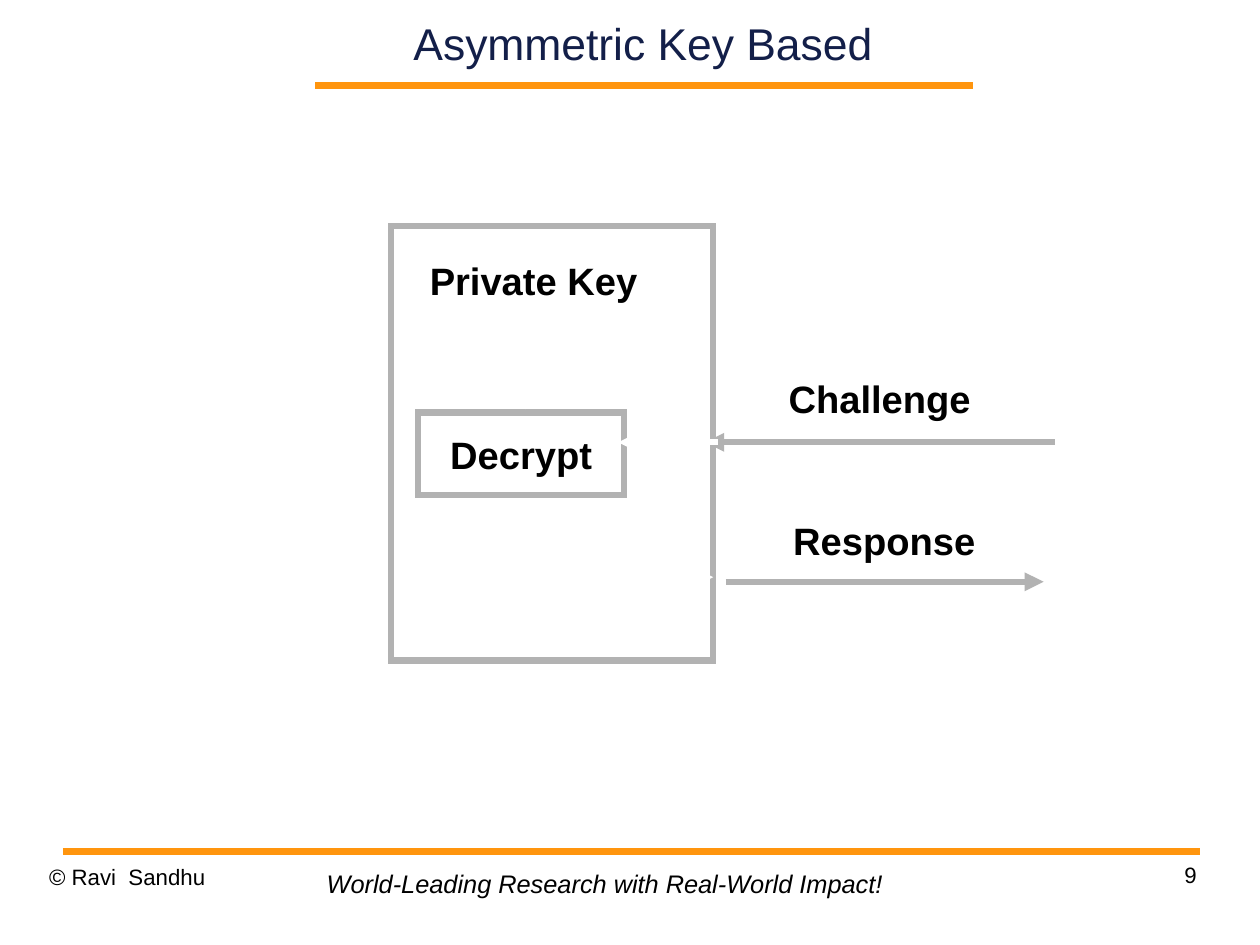
from lxml import etree
from pptx import Presentation
from pptx.dml.color import RGBColor
from pptx.enum.shapes import MSO_CONNECTOR, MSO_SHAPE
from pptx.enum.text import MSO_ANCHOR, MSO_AUTO_SIZE, PP_ALIGN
from pptx.oxml.ns import qn
from pptx.util import Inches, Pt

ORANGE = RGBColor(0xFF, 0x95, 0x0E)
NAVY = RGBColor(0x13, 0x1F, 0x49)
GRAY = RGBColor(0xB2, 0xB2, 0xB2)
BLACK = RGBColor(0, 0, 0)
WHITE = RGBColor(0xFF, 0xFF, 0xFF)
STRAIGHT = MSO_CONNECTOR.STRAIGHT
RECT = MSO_SHAPE.RECTANGLE
MIDDLE = MSO_ANCHOR.MIDDLE
LEFT, CENTER, RIGHT = PP_ALIGN.LEFT, PP_ALIGN.CENTER, PP_ALIGN.RIGHT
GROW = MSO_AUTO_SIZE.SHAPE_TO_FIT_TEXT
WIDTH, HEIGHT = 28 / 2.54, 21 / 2.54


def fill_text(shape, text, size, color=BLACK, align=LEFT, space=1.0,
              pad=(0, 0), wrap=True, bold=False, italic=False):
    """Write one styled paragraph into a shape."""
    frame = shape.text_frame
    frame.word_wrap = wrap
    frame.margin_left = frame.margin_right = Inches(pad[0])
    frame.margin_top = frame.margin_bottom = Inches(pad[1])
    para = frame.paragraphs[0]
    para.text = text
    para.alignment = align
    para.line_spacing = space
    font = para.font
    font.name, font.size = "Arial", Pt(size)
    font.bold, font.italic = bold, italic
    font.color.rgb = color
    return frame


def add_text(slide, box, text, size, **style):
    """Place a text box at left, top, width, height."""
    shape = slide.shapes.add_textbox(*map(Inches, box))
    return fill_text(shape, text, size, **style)


def add_label(slide, box, text):
    """Place a bold diagram label."""
    frame = add_text(slide, box, text, 24, space=0.87, pad=(0.07, 0.03),
                     wrap=False, bold=True)
    frame.auto_size = GROW


def add_line(slide, start, end, color, width=4, arrow=True):
    """Draw a straight line, with an arrowhead at its end if asked."""
    line = slide.shapes.add_connector(STRAIGHT, *map(Inches, start + end))
    line.line.color.rgb = color
    line.line.width = Pt(width)
    if arrow:
        head = etree.SubElement(line.line._get_or_add_ln(), qn("a:tailEnd"))
        head.set("type", "triangle")
    etree.SubElement(line._element.spPr, qn("a:effectLst"))


def add_frame(slide, box):
    """Draw an unfilled gray rectangle with sharp corners."""
    shape = slide.shapes.add_shape(RECT, *map(Inches, box))
    shape.shadow.inherit = False
    shape.fill.background()
    shape.line.color.rgb = GRAY
    shape.line.width = Pt(4)
    join = etree.SubElement(shape.line._get_or_add_ln(), qn("a:miter"))
    join.set("lim", "800000")
    return shape


def add_title(slide, left, top, width, height):
    """Set the title over its orange rule."""
    rule = top + height
    add_line(slide, (left + 0.35, rule), (left + width - 0.33, rule),
             ORANGE, 4.31, False)
    frame = add_text(slide, (left, top, width, height), "Asymmetric Key Based",
                     28, color=NAVY, align=CENTER)
    frame.vertical_anchor = MIDDLE


def add_footer(slide, left, top, width):
    """Set the orange rule, copyright, motto and page number."""
    right = left + width
    add_line(slide, (left, top), (right, top), ORANGE, 4.31, False)
    add_text(slide, (left - 0.12, top + 0.1, 2.57, 0.57), "© Ravi  Sandhu",
             14, space=1.01)
    add_text(slide, (right - 2.6, top + 0.08, 2.57, 0.57), "9",
             14, align=RIGHT, space=1.01)
    motto = add_text(slide, (left + 2.21, top + 0.1, 5.08, 0.37),
                     "World-Leading Research with Real-World Impact!", 16,
                     pad=(0.1, 0.05), wrap=False, italic=True)
    motto.auto_size = GROW


def add_flow(slide, left, top, width, height):
    """Draw the key holder with its challenge and response arrows."""
    right = left + width
    ask, reply = top + 1.89, top + 3.11
    add_line(slide, (right + 2.99, ask), (right - 0.07, ask), GRAY)
    add_label(slide, (right + 0.59, ask - 0.56, 1.74, 0.42), "Challenge")
    add_line(slide, (right + 0.11, reply), (right + 2.89, reply), GRAY)
    add_label(slide, (right + 0.63, reply - 0.54, 1.74, 0.42), "Response")
    add_frame(slide, (left, top, width, height))
    add_label(slide, (left + 0.27, top + 0.3, 1.97, 0.41), "Private Key")
    step = add_frame(slide, (left + 0.24, top + 1.63, 1.8, 0.72))
    frame = fill_text(step, "Decrypt", 24, align=CENTER, pad=(0.1, 0.05),
                      wrap=False, bold=True)
    frame.vertical_anchor = MIDDLE
    mid, turn = left + 1.18, top + 3.07
    for start, end in (
        ((right + 0.04, ask), (right - 0.83, ask)),
        ((mid, top + 0.84), (mid, top + 1.6)),
        ((mid - 0.02, top + 2.39), (mid - 0.02, turn - 0.02)),
        ((mid, turn), (right, turn)),
    ):
        add_line(slide, start, end, WHITE)


def main():
    """Build and save the slide."""
    deck = Presentation()
    deck.slide_width, deck.slide_height = Inches(WIDTH), Inches(HEIGHT)
    slide = deck.slides.add_slide(deck.slide_layouts[6])
    add_footer(slide, 0.55, 7.45, 9.95)
    add_title(slide, 2.41, 0, 6.43, 0.75)
    add_flow(slide, 3.42, 1.98, 2.82, 3.8)
    deck.save("out.pptx")


if __name__ == "__main__":
    main()
